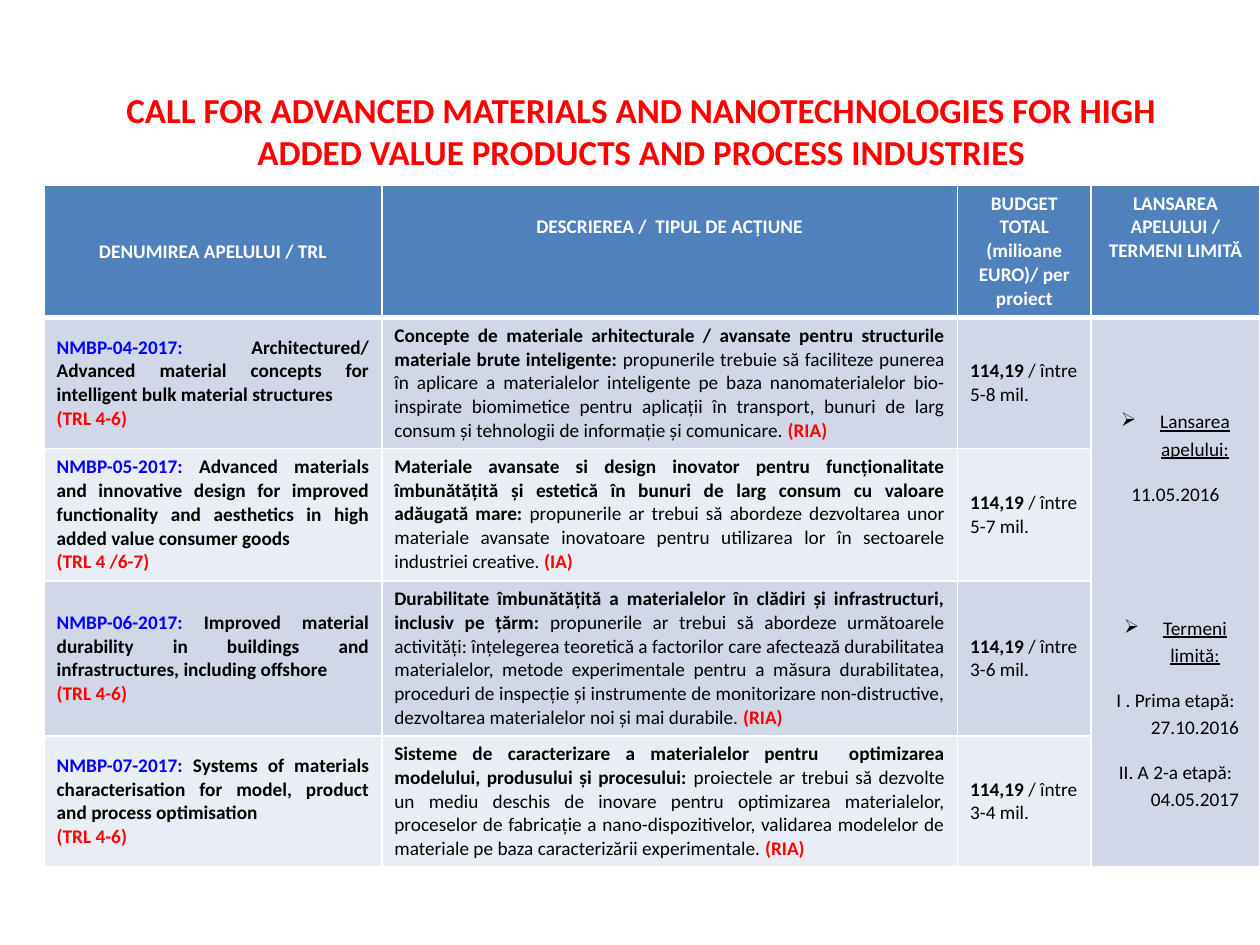
from dataclasses import dataclass

from pptx import Presentation
from pptx.dml.color import RGBColor
from pptx.enum.text import MSO_ANCHOR as Anchor, PP_ALIGN as Align
from pptx.oxml import parse_xml
from pptx.oxml.ns import nsdecls
from pptx.util import Inches, Pt


@dataclass(frozen=True)
class Theme:
    font: str = "Calibri"
    title_size: int = 20
    body_size: int = 11
    red: str = "FF0000"
    blue: str = "0000FF"
    black: str = "000000"
    white: str = "FFFFFF"
    header: str = "4F81BD"
    bands: tuple = ("D0D8E8", "E9EDF4")
    thin: int = 1
    thick: int = 3


@dataclass(frozen=True)
class Run:
    text: str
    color: str = Theme.black
    bold: bool = True
    underline: bool = False
    size: int = Theme.body_size


class CallSlide:
    """Draws styled elements on a slide measured in a 100 by 75 grid."""

    def __init__(self, presentation, theme):
        self.theme = theme
        self.column = presentation.slide_width / 100
        self.row = presentation.slide_height / 75
        self.slide = presentation.slides.add_slide(presentation.slide_layouts[6])

    def place(self, left, top, width, height):
        return (round(left * self.column), round(top * self.row),
                round(width * self.column), round(height * self.row))

    def add_text(self, frame, paragraphs, align):
        frame.word_wrap = True
        for index, runs in enumerate(paragraphs):
            paragraph = frame.add_paragraph() if index else frame.paragraphs[0]
            paragraph.alignment = align
            for item in runs:
                run = paragraph.add_run()
                run.text = item.text
                font = run.font
                font.name, font.size = self.theme.font, Pt(item.size)
                font.bold, font.underline = item.bold, item.underline
                font.color.rgb = RGBColor.from_string(item.color)

    def title(self, text, *box):
        frame = self.slide.shapes.add_textbox(*self.place(*box)).text_frame
        frame.vertical_anchor = Anchor.MIDDLE
        run = Run(text, self.theme.red, size=self.theme.title_size)
        self.add_text(frame, [[run]], Align.CENTER)

    def table(self, left, top, widths, heights):
        box = self.place(left, top, sum(widths), sum(heights))
        table = self.slide.shapes.add_table(len(heights), len(widths), *box).table
        for column, width in zip(table.columns, widths):
            column.width = round(width * self.column)
        for row, height in zip(table.rows, heights):
            row.height = round(height * self.row)
        for index, row in enumerate(table.rows):
            fill = self.theme.bands[(index - 1) % 2] if index else self.theme.header
            for cell in row.cells:
                self.frame_cell(cell, index)
                self.fill_cell(cell, fill)
        return table

    def frame_cell(self, cell, row):
        properties = cell._tc.get_or_add_tcPr()
        for side in "LRTB":
            heavy = (side, row) in (("B", 0), ("T", 1))
            width = Pt(self.theme.thick if heavy else self.theme.thin)
            properties.append(parse_xml(
                f'<a:ln{side} {nsdecls("a")} w="{width}"><a:solidFill>'
                f'<a:srgbClr val="{self.theme.white}"/></a:solidFill></a:ln{side}>'))

    def fill_cell(self, cell, color):
        cell.fill.solid()
        cell.fill.fore_color.rgb = RGBColor.from_string(color)

    def cell(self, cell, paragraphs, align=Align.LEFT, anchor=Anchor.TOP):
        cell.vertical_anchor = anchor
        self.add_text(cell.text_frame, paragraphs, align)

    def schedule(self, cell, entries):
        runs = [[Run(text, bold=False, underline=heading)] for text, heading in entries]
        self.cell(cell, runs, Align.CENTER)
        cell.margin_left = cell.margin_right = Inches(0.12)
        cell.margin_top, cell.margin_bottom = Inches(0.71), 0
        for index, (paragraph, (_, heading)) in enumerate(
                zip(cell.text_frame.paragraphs, entries)):
            paragraph.line_spacing, paragraph.space_after = 1.15, Pt(10)
            properties = paragraph._p.get_or_add_pPr()
            properties.set("marL", str(Inches(0.31)))
            properties.set("indent", str(-Inches(0.31)))
            if heading:
                properties.append(parse_xml(f'<a:buChar {nsdecls("a")} char="➢"/>'))
                if index:
                    paragraph.space_before = Pt(51)


HEADERS = (
    ("DENUMIREA APELULUI / TRL", Anchor.MIDDLE),
    ("DESCRIEREA /  TIPUL DE ACȚIUNE", Anchor.TOP),
    ("BUDGET TOTAL (milioane EURO)/ per proiect", Anchor.TOP),
    ("LANSAREA APELULUI / TERMENI LIMITĂ", Anchor.TOP),
)
CALLS = (
    ("NMBP-04-2017:",
     "Architectured/ Advanced material concepts for intelligent bulk material structures",
     "(TRL 4-6)",
     "Concepte de materiale arhitecturale / avansate pentru structurile materiale brute "
     "inteligente: ",
     "propunerile trebuie să faciliteze punerea în aplicare a materialelor inteligente pe "
     "baza nanomaterialelor bio-inspirate biomimetice pentru aplicații în transport, bunuri "
     "de larg consum și tehnologii de informație și comunicare. ",
     "(RIA)", "5-8"),
    ("NMBP-05-2017:",
     "Advanced materials and innovative design for improved functionality and aesthetics "
     "in high added value consumer goods",
     "(TRL 4 /6-7)",
     "Materiale avansate si design inovator pentru funcționalitate îmbunătățită și estetică "
     "în bunuri de larg consum cu valoare adăugată mare: ",
     "propunerile ar trebui să abordeze dezvoltarea unor materiale avansate inovatoare "
     "pentru utilizarea lor în sectoarele industriei creative. ",
     "(IA)", "5-7"),
    ("NMBP-06-2017:",
     "Improved material durability in buildings and infrastructures, including offshore",
     "(TRL 4-6)",
     "Durabilitate îmbunătățită a materialelor în clădiri și infrastructuri, inclusiv pe "
     "țărm: ",
     "propunerile ar trebui să abordeze următoarele activități: înțelegerea teoretică a "
     "factorilor care afectează durabilitatea materialelor, metode experimentale pentru a "
     "măsura durabilitatea, proceduri de inspecție și instrumente de monitorizare "
     "non-distructive, dezvoltarea materialelor noi și mai durabile. ",
     "(RIA)", "3-6"),
    ("NMBP-07-2017:",
     "Systems of materials characterisation for model, product and process optimisation",
     "(TRL 4-6)",
     "Sisteme de caracterizare a materialelor pentru  optimizarea modelului, produsului și "
     "procesului: ",
     "proiectele ar trebui să dezvolte un mediu deschis de inovare pentru optimizarea "
     "materialelor, proceselor de fabricație a nano-dispozitivelor, validarea modelelor de "
     "materiale pe baza caracterizării experimentale. ",
     "(RIA)", "3-4"),
)
SCHEDULE = (
    ("Lansarea apelului:", True),
    ("11.05.2016", False),
    ("Termeni limită:", True),
    ("I . Prima etapă: 27.10.2016", False),
    ("II. A 2-a etapă: 04.05.2017", False),
)


def main():
    presentation = Presentation()
    presentation.slide_width, presentation.slide_height = Inches(10), Inches(7.5)
    theme = Theme()
    page = CallSlide(presentation, theme)
    page.title("CALL FOR ADVANCED MATERIALS AND NANOTECHNOLOGIES FOR HIGH ADDED VALUE "
               "PRODUCTS AND PROCESS INDUSTRIES", 5.9, 6, 90, 8.7)
    table = page.table(3.5, 14.7, (26.8, 45.7, 10.6, 13.4),
                       (10.5, 10.4, 10.5, 12.3, 10.4))
    for column, (text, anchor) in enumerate(HEADERS):
        page.cell(table.cell(0, column), [[Run(text, theme.white)]], Align.CENTER, anchor)
    table.cell(0, 1).margin_top = Inches(0.24)
    for row, (code, name, level, topic, detail, action, share) in enumerate(CALLS, 1):
        page.cell(table.cell(row, 0),
                  [[Run(code + " ", theme.blue), Run(name)], [Run(level, theme.red)]],
                  Align.JUSTIFY, Anchor.MIDDLE)
        page.cell(table.cell(row, 1),
                  [[Run(topic), Run(detail, bold=False), Run(action, theme.red)]],
                  Align.JUSTIFY)
        page.cell(table.cell(row, 2),
                  [[Run("114,19"), Run(f" / între {share} mil.", bold=False)]],
                  anchor=Anchor.MIDDLE)
    table.cell(1, 3).merge(table.cell(len(CALLS), 3))
    page.schedule(table.cell(1, 3), SCHEDULE)
    presentation.save("out.pptx")


if __name__ == "__main__":
    main()
